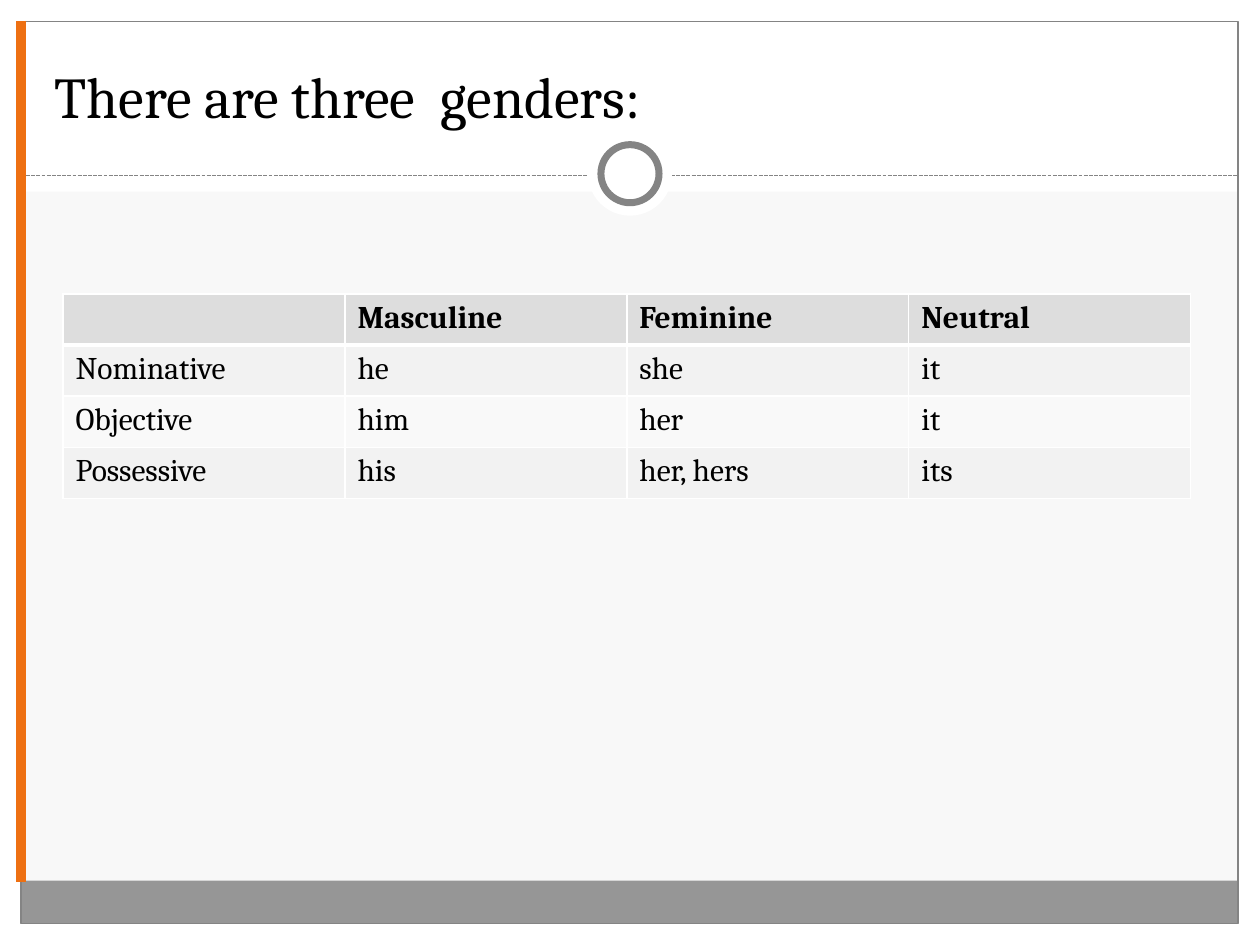
from lxml import etree
from pptx import Presentation
from pptx.dml.color import RGBColor
from pptx.enum import dml, shapes, text
from pptx.oxml import ns
from pptx.util import Pt


def color(hex_value):
    return RGBColor.from_string(hex_value)


def write(frame, content, size=18, bold=False, font="Cambria", ink="000000"):
    paragraph = frame.paragraphs[0]
    paragraph.alignment = text.PP_ALIGN.LEFT
    run = paragraph.add_run()
    run.text = content
    run.font.name = font
    run.font.size = Pt(size)
    run.font.bold = bold
    run.font.color.rgb = color(ink)


presentation = Presentation()
presentation.slide_width, presentation.slide_height = Pt(720), Pt(540)
slide = presentation.slides.add_slide(presentation.slide_layouts[5])
slide.background.fill.solid()
slide.background.fill.fore_color.rgb = color("F8F8F8")

# White margins, footer bar, frame and the ring on the divider
RECTANGLE, OVAL = shapes.MSO_SHAPE.RECTANGLE, shapes.MSO_SHAPE.OVAL
decorations = [
    # kind, left, top, width, height, fill, line width
    (RECTANGLE, 0, 528, 720, 12, "FFFFFF", 0),
    (RECTANGLE, 0, 0, 720, 109.5, "FFFFFF", 0),
    (RECTANGLE, 0, 0, 12, 540, "FFFFFF", 0),
    (RECTANGLE, 708, 0, 12, 540, "FFFFFF", 0),
    (RECTANGLE, 11.75, 503.25, 695.5, 24.5, "969696", 0),
    (RECTANGLE, 12, 12.25, 695.5, 515.5, None, 0.75),
    ("divider", 12, 100.5, 696, 0, "848484", 0.75),
    (OVAL, 336, 75.25, 48, 48, "FFFFFF", 0),
    (OVAL, 343.4, 82.65, 33.2, 33.2, "FFFFFF", 4),
    ("accent", 12, 12, 0, 492, "EE7012", 6),
]
for kind, left, top, width, height, fill, line_width in decorations:
    if kind in ("divider", "accent"):
        line = slide.shapes.add_connector(
            shapes.MSO_CONNECTOR.STRAIGHT,
            Pt(left), Pt(top), Pt(left + width), Pt(top + height))
        line.line.color.rgb = color(fill)
        line.line.width = Pt(line_width)
        if kind == "divider":
            line.line.dash_style = dml.MSO_LINE.SQUARE_DOT
        etree.SubElement(line._element.spPr, ns.qn("a:effectLst"))
        continue
    shape = slide.shapes.add_shape(kind, Pt(left), Pt(top), Pt(width), Pt(height))
    shape.shadow.inherit = False
    if fill:
        shape.fill.solid()
        shape.fill.fore_color.rgb = color(fill)
    else:
        shape.fill.background()
    if line_width:
        shape.line.color.rgb = color("848484")
        shape.line.width = Pt(line_width)
    else:
        shape.line.fill.background()

title = slide.shapes.title
title.left, title.top, title.width, title.height = Pt(24), Pt(18), Pt(672), Pt(60)
title.text_frame.vertical_anchor = text.MSO_ANCHOR.BOTTOM
write(title.text_frame, "There are three  genders:", size=33)
slide.shapes._spTree.append(title._element)  # in front of the white header

pronouns = [
    ["", "Masculine", "Feminine", "Neutral"],
    ["Nominative", "he", "she", "it"],
    ["Objective", "him", "her", "it"],
    ["Possessive", "his", "her, hers", "its"],
]
row_fills = ["DDDDDD", "F2F2F2", "F9F9F9", "F2F2F2"]
table = slide.shapes.add_table(
    4, 4, Pt(36), Pt(168), Pt(644.4), Pt(116.8)).table
for column in table.columns:
    column.width = Pt(161.1)
for row_index, words in enumerate(pronouns):
    table.rows[row_index].height = Pt(29.2)
    for column_index, word in enumerate(words):
        cell = table.cell(row_index, column_index)
        properties = cell._tc.get_or_add_tcPr()
        for side in "LRTB":
            thick = (row_index, side) in ((0, "B"), (1, "T"))
            border = etree.SubElement(
                properties, ns.qn(f"a:ln{side}"), w=str(Pt(3 if thick else 1)))
            border_fill = etree.SubElement(border, ns.qn("a:solidFill"))
            etree.SubElement(border_fill, ns.qn("a:srgbClr"), val="FFFFFF")
        cell.fill.solid()
        cell.fill.fore_color.rgb = color(row_fills[row_index])
        if word:
            write(cell.text_frame, word, bold=row_index == 0)

presentation.save("out.pptx")
